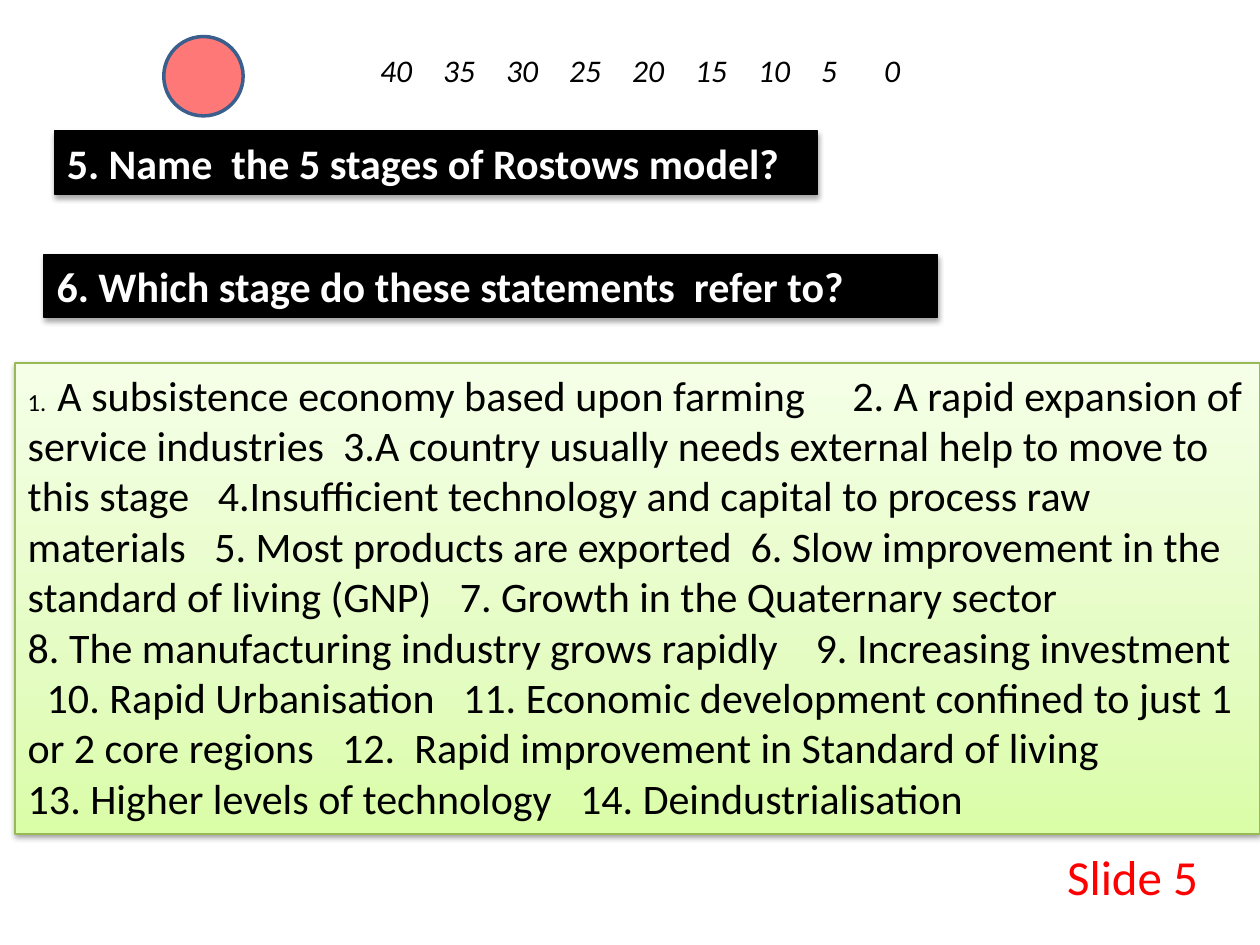
from copy import deepcopy
from dataclasses import dataclass
from lxml.etree import SubElement as Sub
from pptx import Presentation
from pptx.dml.color import RGBColor as RGB
from pptx.enum.shapes import MSO_SHAPE as Kind
from pptx.enum.text import MSO_ANCHOR as Anchor, MSO_AUTO_SIZE as Fit, PP_ALIGN as Align
from pptx.oxml.ns import qn
from pptx.util import Inches, Pt


@dataclass(frozen=True)
class Theme:
    font: str = "Calibri"
    black: str = "000000"
    white: str = "FFFFFF"
    red: str = "FF0000"
    blue: str = "3A5F8C"
    green: str = "98B955"
    fade: tuple = ((0, "DAFDA7"), (0.35, "E4FCC2"), (1, "F5FFE7"))
    small: int = 14
    scale: int = 18
    text: int = 24
    label: int = 28


LOOK = Theme()
WIDE, HIGH = Inches(10), Inches(7.5)
COLS, ROWS = 100, 75

FACTS = (
    "A subsistence economy based upon farming     2. A rapid expansion of service industries  "
    "3.A country usually needs external help to move to this stage   4.Insufficient technology "
    "and capital to process raw materials   5. Most products are exported  6. Slow improvement "
    "in the standard of living (GNP)   7. Growth in the Quaternary sector",
    "8. The manufacturing industry grows rapidly    9. Increasing investment    10. Rapid "
    "Urbanisation   11. Economic development confined to just 1 or 2 core regions   12.  Rapid "
    "improvement in Standard of living",
    "13. Higher levels of technology   14. Deindustrialisation",
)


def grid(col, row, cols, rows):
    return (int(WIDE * col / COLS), int(HIGH * row / ROWS),
            int(WIDE * cols / COLS), int(HIGH * rows / ROWS))


def place(shape, box):
    shape.left, shape.top, shape.width, shape.height = box


def write(para, text, size=LOOK.text, color=LOOK.black, bold=False, slant=False,
          align=Align.LEFT):
    para.alignment = align
    para.space_before = Pt(0)
    run = para.add_run()
    run.text = text
    font = run.font
    font.name, font.size, font.bold, font.italic = LOOK.font, Pt(size), bold, slant
    font.color.rgb = RGB.from_string(color)


def frame(shape):
    text = shape.text_frame
    text.word_wrap = True
    text.auto_size = Fit.NONE
    text.vertical_anchor = Anchor.TOP
    return text


def paint(shape, color):
    shape.fill.solid()
    shape.fill.fore_color.rgb = RGB.from_string(color)


def edge(shape, color, width):
    shape.line.color.rgb = RGB.from_string(color)
    shape.line.width = Pt(width)


def alpha(color, share):
    Sub(color, qn("a:alpha"), val=str(share * 1000))


def shade(shape, dist, share):
    shape.shadow.inherit = False
    list_ = shape._element.spPr.find(qn("a:effectLst"))
    drop = Sub(list_, qn("a:outerShdw"), blurRad=str(Pt(3.1)), dist=str(Pt(dist)),
               dir="5400000", rotWithShape="0")
    alpha(Sub(drop, qn("a:srgbClr"), val=LOOK.black), share)


def label(slide, box, text, **form):
    write(frame(slide.shapes.add_textbox(*box)).paragraphs[0], text, **form)


def banner(shape, text):
    paint(shape, LOOK.black)
    edge(shape, LOOK.black, 0.75)
    shade(shape, 1.8, 35)
    write(frame(shape).paragraphs[0], text, color=LOOK.white, bold=True)


def marker(slide, box):
    dot = slide.shapes.add_shape(Kind.OVAL, *box)
    dot.shadow.inherit = False
    paint(dot, LOOK.red)
    alpha(dot._element.spPr.find(qn("a:solidFill"))[0], 53)
    edge(dot, LOOK.blue, 2)


def blend(shape):
    fill = shape.fill
    fill.gradient()
    fill.gradient_angle = 90
    stops = shape._element.spPr.find(qn("a:gradFill")).find(qn("a:gsLst"))
    stops.append(deepcopy(stops[-1]))
    for stop, (spot, color) in zip(fill.gradient_stops, LOOK.fade):
        stop.position = spot
        stop.color.rgb = RGB.from_string(color)


def panel(shape, box):
    place(shape, box)
    blend(shape)
    edge(shape, LOOK.green, 0.75)
    shade(shape, 1.6, 38)
    text = frame(shape)
    for spot, fact in enumerate(FACTS):
        para = text.add_paragraph() if spot else text.paragraphs[0]
        if not spot:
            write(para, "1.  ", size=LOOK.small)
        write(para, fact)
        props = para._p.get_or_add_pPr()
        props.set("marL", "0")
        props.set("indent", "0")
        Sub(props, qn("a:buNone"))


def main():
    deck = Presentation()
    deck.slide_width, deck.slide_height = WIDE, HIGH
    slide = deck.slides.add_slide(deck.slide_layouts[1])
    title, body = slide.placeholders
    place(title, grid(4.3, 10.4, 60.6, 5))
    banner(title, "5. Name  the 5 stages of Rostows model?")
    banner(slide.shapes.add_shape(Kind.RECTANGLE, *grid(3.5, 20.2, 70.9, 5)),
           "6. Which stage do these statements  refer to?")
    panel(body, grid(1.2, 28.8, 98.8, 37.4))
    label(slide, grid(6.7, 3.6, 88.2, 4), "\t".join(str(n) for n in range(40, -1, -5)),
          size=LOOK.scale, slant=True, align=Align.CENTER)
    marker(slide, grid(13, 2.9, 6.3, 6.3))
    label(slide, grid(83.7, 66.7, 14.2, 5.7), "Slide 5", size=LOOK.label, color=LOOK.red)
    deck.save("out.pptx")


if __name__ == "__main__":
    main()
